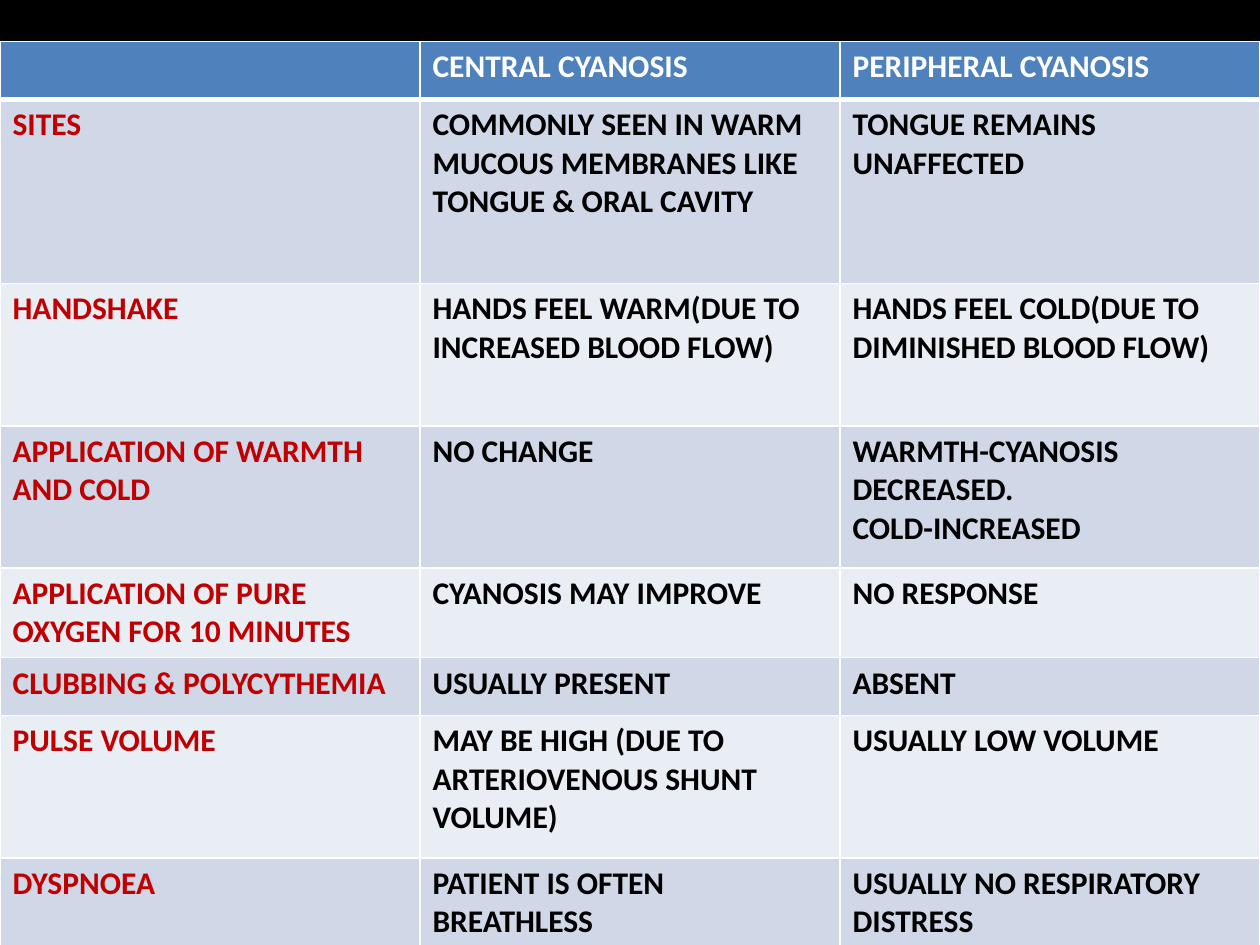
from dataclasses import dataclass

from lxml import etree
from pptx import Presentation
from pptx.dml.color import RGBColor
from pptx.oxml import ns
from pptx.util import Inches, Pt


@dataclass(frozen=True)
class Theme:
    back: str = "000000"
    head: str = "4F81BD"
    bands: tuple = ("D0D8E8", "E9EDF4")
    rule: str = "FFFFFF"
    title: str = "FFFFFF"
    label: str = "C00000"
    body: str = "000000"
    font: str = "Calibri"
    size: int = 18


@dataclass(frozen=True)
class Row:
    height: float
    sign: str
    central: str
    outer: str


THEME = Theme()

ROWS = [
    Row(0.46, "", "CENTRAL CYANOSIS", "PERIPHERAL CYANOSIS"),
    Row(1.46, "SITES",
        "COMMONLY SEEN IN WARM MUCOUS MEMBRANES LIKE TONGUE & ORAL CAVITY",
        "TONGUE REMAINS UNAFFECTED"),
    Row(1.13, "HANDSHAKE",
        "HANDS FEEL WARM(DUE TO INCREASED BLOOD FLOW)",
        "HANDS FEEL COLD(DUE TO DIMINISHED BLOOD FLOW)"),
    Row(1.13, "APPLICATION OF WARMTH AND COLD", "NO CHANGE",
        "WARMTH-CYANOSIS DECREASED.\nCOLD-INCREASED"),
    Row(0.46, "APPLICATION OF PURE OXYGEN FOR 10 MINUTES",
        "CYANOSIS MAY IMPROVE", "NO RESPONSE"),
    Row(0.46, "CLUBBING & POLYCYTHEMIA", "USUALLY PRESENT", "ABSENT"),
    Row(1.13, "PULSE VOLUME",
        "MAY BE HIGH (DUE TO ARTERIOVENOUS SHUNT VOLUME)",
        "USUALLY LOW VOLUME"),
    Row(0.79, "DYSPNOEA", "PATIENT IS OFTEN BREATHLESS",
        "USUALLY NO RESPIRATORY DISTRESS"),
]


def add_rules(cell, top: float, base: float) -> None:
    """Draw the four cell borders, widths in points."""
    props = cell._tc.get_or_add_tcPr()
    for side, width in (("L", 1), ("R", 1), ("T", top), ("B", base)):
        line = etree.SubElement(props, ns.qn(f"a:ln{side}"), w=str(Pt(width)))
        fill = etree.SubElement(line, ns.qn("a:solidFill"))
        etree.SubElement(fill, ns.qn("a:srgbClr"), val=THEME.rule)


def fill_cell(cell, words: str, fill: str, ink: str) -> None:
    cell.fill.solid()
    cell.fill.fore_color.rgb = RGBColor.from_string(fill)
    cell.text = words
    for para in cell.text_frame.paragraphs:
        font = para.font
        font.name, font.size, font.bold = THEME.font, Pt(THEME.size), True
        font.color.rgb = RGBColor.from_string(ink)


def add_grid(slide, rows: list[Row]) -> None:
    frame = slide.shapes.add_table(
        len(rows), 3, 0, Inches(0.33), Inches(10), Inches(7.24))
    table = frame.table
    for i, row in enumerate(rows):
        table.rows[i].height = Inches(row.height)
        fill = THEME.bands[(i - 1) % 2] if i else THEME.head
        for j, words in enumerate((row.sign, row.central, row.outer)):
            ink = THEME.label if j == 0 else THEME.body
            cell = table.cell(i, j)
            add_rules(cell, 3 if i == 1 else 1, 1 if i else 3)
            fill_cell(cell, words, fill, ink if i else THEME.title)
    # The first label has a hanging indent
    para = table.cell(1, 0).text_frame.paragraphs[0]
    props = para._p.get_or_add_pPr()
    props.set("marL", str(Inches(0.38)))
    props.set("indent", str(Inches(-0.38)))
    # Rows grow to fit their text
    frame.height = Inches(7.24)


def main() -> None:
    deck = Presentation()
    deck.slide_width, deck.slide_height = Inches(10), Inches(7.5)
    slide = deck.slides.add_slide(deck.slide_layouts[6])

    # Background
    back = slide.background.fill
    back.solid()
    back.fore_color.rgb = RGBColor.from_string(THEME.back)

    # Comparison table
    add_grid(slide, ROWS)
    deck.save("out.pptx")


if __name__ == "__main__":
    main()
